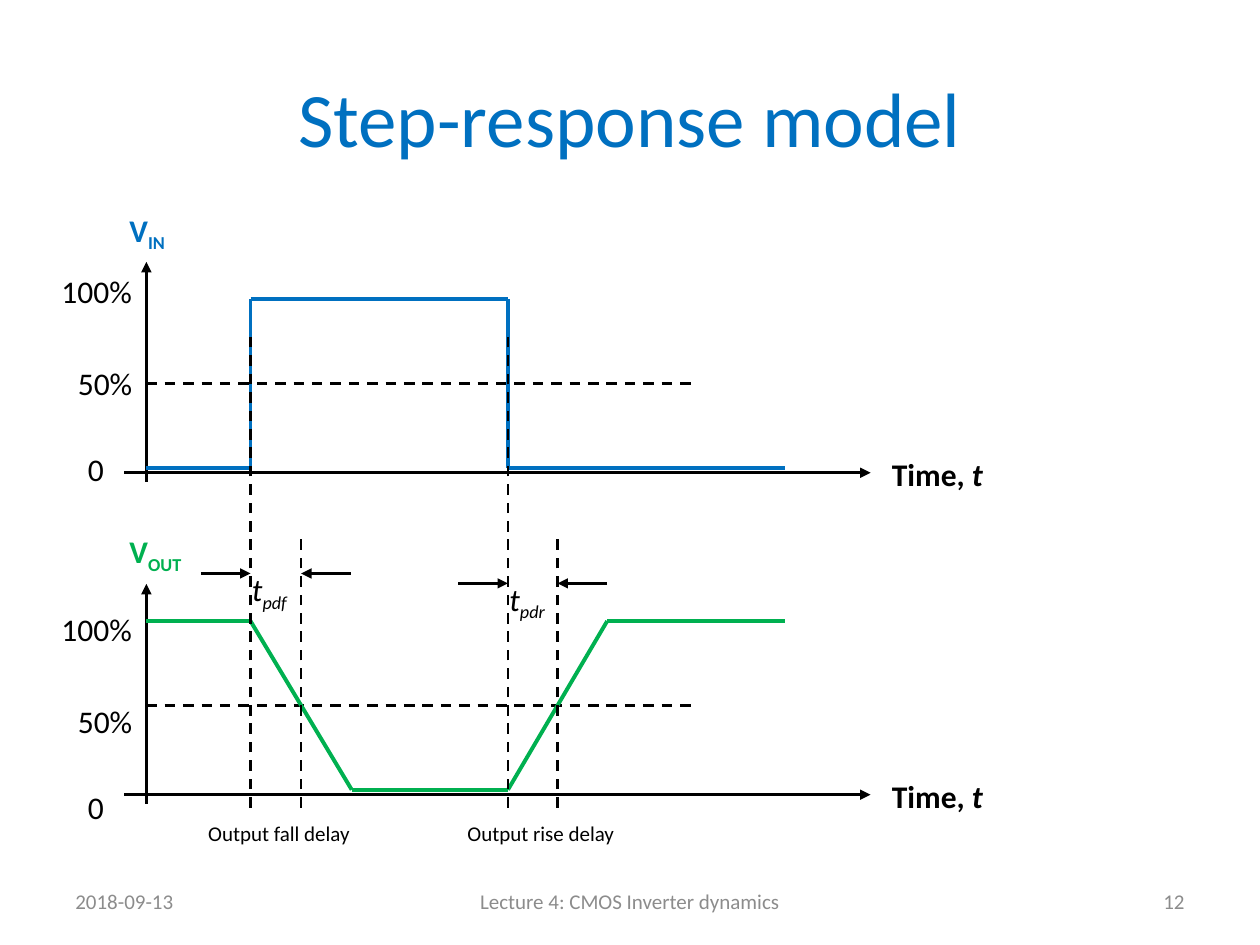
from itertools import pairwise

from lxml.etree import SubElement
from pptx import Presentation
from pptx.dml.color import RGBColor
from pptx.enum.dml import MSO_LINE
from pptx.enum.shapes import MSO_CONNECTOR
from pptx.enum.text import MSO_ANCHOR, PP_ALIGN
from pptx.oxml.ns import qn
from pptx.util import Cm, Pt

BLACK = RGBColor(0x00, 0x00, 0x00)
BLUE = RGBColor(0x00, 0x70, 0xC0)
GREEN = RGBColor(0x00, 0xB0, 0x50)
GREY = RGBColor(0x8C, 0x8C, 0x8C)
FONT = "Calibri"

# Shared time positions and signal levels, in cm (levels relative to the time axis)
ORIGIN, RISE, FALL, END = 2.95, 5.05, 10.24, 15.82
HIGH, MID, LOW = -3.5, -1.8, -0.1
IN_AXIS, OUT_AXIS = 9.53, 16.02


def add_run(p, text, size=18, color=BLACK, bold=False, italic=False, sub=False):
    r = p.add_run()
    r.text = text
    r.font.name = FONT
    r.font.size = Pt(size)
    r.font.color.rgb = color
    r.font.bold = bold
    r.font.italic = italic
    if sub:
        r.font._element.set("baseline", "-25000")


def add_text(slide, text, x, y, w, h=1.02, sub="", italic_end="", align=PP_ALIGN.LEFT,
             anchor=MSO_ANCHOR.TOP, wrap=False, **fmt):
    """Add a label, with an optional subscript or italic ending."""
    tf = slide.shapes.add_textbox(Cm(x), Cm(y), Cm(w), Cm(h)).text_frame
    tf.word_wrap = wrap
    tf.vertical_anchor = anchor
    p = tf.paragraphs[0]
    p.alignment = align
    add_run(p, text, **fmt)
    if sub:
        add_run(p, sub, sub=True, **fmt)
    if italic_end:
        add_run(p, italic_end, italic=True, **fmt)


def add_line(slide, start, end, color=BLACK, width=1.5, dashed=False, arrow=False):
    cx = slide.shapes.add_connector(
        MSO_CONNECTOR.STRAIGHT, *(Cm(v) for v in (*start, *end)))
    cx.line.color.rgb = color
    cx.line.width = Pt(width)
    if dashed:
        cx.line.dash_style = MSO_LINE.DASH
    if arrow:
        SubElement(cx.line._get_or_add_ln(), qn("a:tailEnd"), type="triangle")
    SubElement(cx._element.spPr, qn("a:effectLst"))


def add_title(slide, text):
    sp = slide.shapes.title
    sp.left, sp.top, sp.width, sp.height = Cm(1.27), Cm(0.76), Cm(22.86), Cm(3.18)
    tf = sp.text_frame
    tf.vertical_anchor = MSO_ANCHOR.MIDDLE
    p = tf.paragraphs[0]
    p.alignment = PP_ALIGN.CENTER
    add_run(p, text, size=44, color=BLUE)


def add_plot(slide, axis_y, sub, label_w, color, wave, tick_shift=0.0):
    """Draw axes, labels, the 50% level and one voltage waveform."""
    add_line(slide, (ORIGIN, axis_y + 0.18), (ORIGIN, axis_y - 4.25), arrow=True)
    add_line(slide, (2.51, axis_y), (17.55, axis_y), arrow=True)
    add_line(slide, (ORIGIN, axis_y + MID), (13.94, axis_y + MID), dashed=True)

    add_text(slide, "V", 2.36, axis_y - 5.41, label_w, sub=sub, color=color, bold=True)
    add_text(slide, "Time, ", 17.73, axis_y - 0.48, 2.49, italic_end="t", bold=True)
    for text, x, dy, w in (("100%", 0.99, -4.17, 2.06),
                           ("50%", 1.32, -2.32, 1.75),
                           ("0", 1.52, -0.59, 0.97)):
        add_text(slide, text, x, axis_y + dy + tick_shift, w)

    points = [(x, axis_y + level) for x, level in wave]
    for start, end in pairwise(points):
        add_line(slide, start, end, color=color, width=2.25)


def add_delay(slide, start, end, arrow_y, sub, caption, caption_x, caption_w):
    """Mark a propagation delay between two dashed verticals."""
    for x, top in ((start, 6.71), (end, 10.87)):
        add_line(slide, (x, 16.28), (x, top), dashed=True)
    for outer, inner in ((start - 1, start), (end + 1, end)):
        add_line(slide, (outer, arrow_y), (inner, arrow_y), arrow=True)
    add_text(slide, "t", start - 0.22, arrow_y - 0.2, 1.43, sub=sub, italic=True)
    add_text(slide, caption, caption_x, 16.41, caption_w, 0.76,
             align=PP_ALIGN.CENTER, size=12)


def add_footer(slide):
    for text, x, w, align in (
            ("2018-09-13", 1.27, 5.93, PP_ALIGN.LEFT),
            ("Lecture 4: CMOS Inverter dynamics", 8.68, 8.04, PP_ALIGN.CENTER),
            ("12", 18.2, 5.93, PP_ALIGN.RIGHT)):
        add_text(slide, text, x, 17.66, w, align=align, anchor=MSO_ANCHOR.MIDDLE,
                 wrap=True, size=12, color=GREY)


def main():
    prs = Presentation()
    prs.slide_width, prs.slide_height = Cm(25.4), Cm(19.05)
    slide = prs.slides.add_slide(prs.slide_layouts[5])
    add_title(slide, "Step-response model")
    add_footer(slide)

    # Input step and the sloped output response
    add_plot(slide, IN_AXIS, "IN", 1.3, BLUE,
             [(ORIGIN, LOW), (RISE, LOW), (RISE, HIGH),
              (FALL, HIGH), (FALL, LOW), (END, LOW)])
    add_plot(slide, OUT_AXIS, "OUT", 1.68, GREEN,
             [(ORIGIN, HIGH), (RISE, HIGH), (7.09, LOW),
              (FALL, LOW), (12.24, HIGH), (END, HIGH)], tick_shift=0.33)

    # Delays measured at the 50% level
    add_delay(slide, RISE, 6.07, 11.56, "pdf", "Output fall delay", 3.91, 3.43)
    add_delay(slide, FALL, 11.24, 11.76, "pdr", "Output rise delay ", 9.14, 3.53)

    prs.save("out.pptx")


if __name__ == "__main__":
    main()
